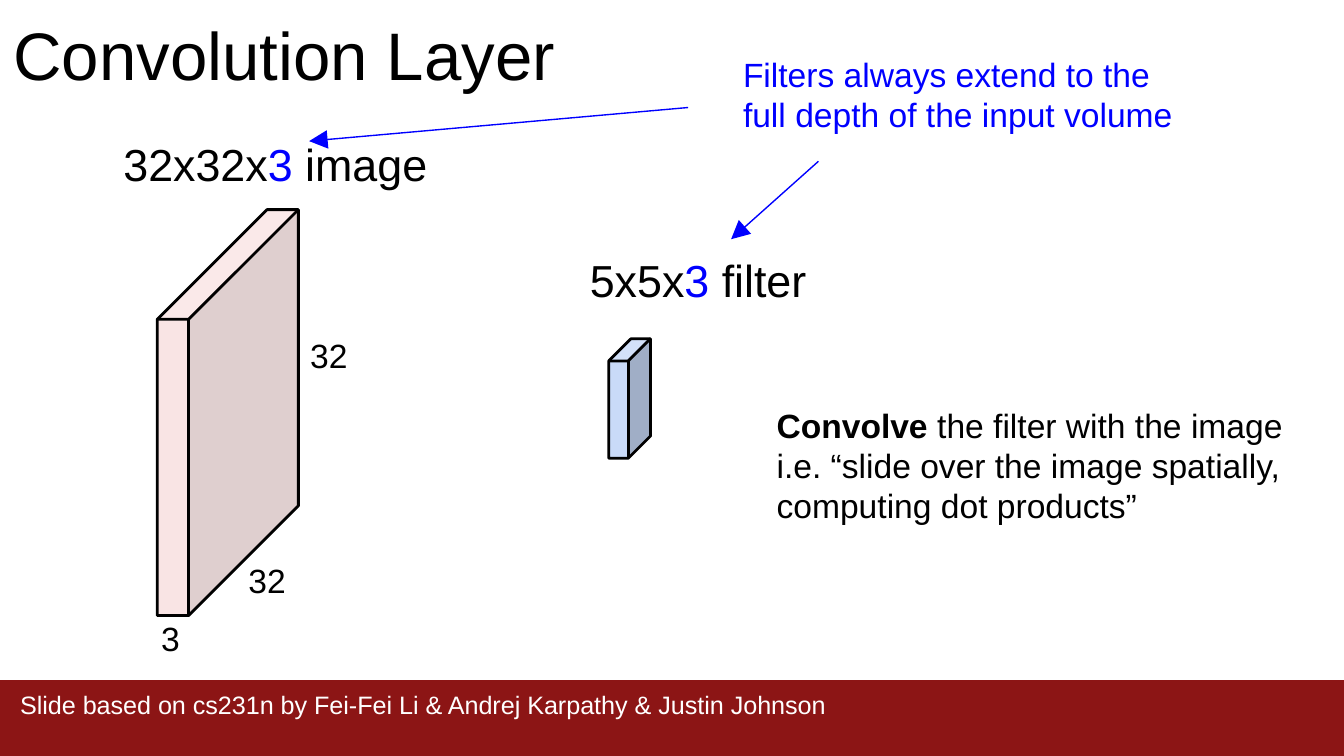
from lxml import etree
from pptx import Presentation
from pptx.dml.color import RGBColor
from pptx.enum.shapes import MSO_CONNECTOR, MSO_SHAPE
from pptx.enum.text import MSO_ANCHOR, MSO_AUTO_SIZE, PP_ALIGN
from pptx.oxml.ns import qn
from pptx.util import Inches, Pt

RECT, CUBE = MSO_SHAPE.RECTANGLE, MSO_SHAPE.CUBE
LINE = MSO_CONNECTOR.STRAIGHT
TOP, LEFT, NOFIT = MSO_ANCHOR.TOP, PP_ALIGN.LEFT, MSO_AUTO_SIZE.NONE
BLACK = RGBColor(0, 0, 0)
WHITE = RGBColor(255, 255, 255)
BLUE = RGBColor(0, 0, 255)
RED = RGBColor(0x8C, 0x15, 0x15)
PINK = RGBColor(0xF4, 0xCC, 0xCC)
PALE = RGBColor(0xC9, 0xDA, 0xF8)
BOLD = {"bold": True}
HUE = {"color": BLUE}

TITLE = ((0, 0, 8.42, 0.72), 36, [[("Convolution Layer", {})]])
CREDIT = "Slide based on cs231n by Fei-Fei Li & Andrej Karpathy & Justin Johnson"
BAR = (0, 5.06, 10, 0.58)
CUBES = [
    ((1.17, 1.56, 1.05, 3.02), 0.777, PINK, 52),
    ((4.53, 2.52, 0.31, 0.89), 0.534, PALE, 100),
]
TEXTS = [
    ((1.75, 4.07, 0.54, 0.34), 18, [[("32", {})]]),
    ((2.21, 2.39, 0.54, 0.31), 18, [[("32", {})]]),
    ((1.1, 4.5, 0.54, 0.2), 18, [[("3", {})]]),
    ((4.29, 1.78, 2.31, 0.39), 24, [[("5x5x", {}), ("3", HUE), (" filter", {})]]),
    ((0.82, 0.92, 3.66, 0.52), 24, [[("32x32x", {}), ("3", HUE), (" image", {})]]),
    ((5.68, 2.91, 4.32, 0.83), 18, [
        [("Convolve ", BOLD), ("the filter with the image", {})],
        [("i.e. “slide over the image spatially, computing dot products”", {})],
    ]),
    ((5.43, 0.3, 3.59, 0.64), 18, [
        [("Filters always extend to the full depth of the input volume", HUE)],
    ]),
]
ARROWS = [(6.09, 1.2, 5.44, 1.78), (5.12, 0.8, 2.3, 1.05)]


def assign(obj, vals):
    for key, val in vals.items():
        setattr(obj, key, val)


def place(shape, box):
    names = ("left", "top", "width", "height")
    assign(shape, dict(zip(names, map(Inches, box))))


def write(shape, size, paras, pad=0.1):
    frame = shape.text_frame
    sides = ("left", "right", "top", "bottom")
    assign(frame, {f"margin_{side}": Inches(pad) for side in sides})
    assign(frame, {"word_wrap": True, "auto_size": NOFIT, "vertical_anchor": TOP})
    for i, runs in enumerate(paras):
        para = frame.add_paragraph() if i else frame.paragraphs[0]
        assign(para, {"alignment": LEFT, "line_spacing": 1.0,
                      "space_before": Pt(0), "space_after": Pt(0)})
        for text, look in runs:
            run = para.add_run()
            run.text = text
            assign(run.font, {"name": "Arial", "size": Pt(size),
                              "bold": look.get("bold", False)})
            run.font.color.rgb = look.get("color", BLACK)


def add_text(slide, box, size, paras, **opts):
    write(slide.shapes.add_textbox(*map(Inches, box)), size, paras, **opts)


def add_solid(slide, kind, box, color):
    shape = slide.shapes.add_shape(kind, *map(Inches, box))
    shape.shadow.inherit = False
    shape.fill.solid()
    shape.fill.fore_color.rgb = color
    return shape


def add_cube(slide, box, depth, color, alpha):
    cube = add_solid(slide, CUBE, box, color)
    cube.adjustments[0] = depth
    cube.line.color.rgb = BLACK
    cube.line.width = Pt(1.5)
    if alpha < 100:
        tint = cube._element.spPr.find(qn("a:solidFill"))[0]
        etree.SubElement(tint, qn("a:alpha"), val=str(alpha * 1000))


def add_arrow(slide, ends):
    arrow = slide.shapes.add_connector(LINE, *map(Inches, ends))
    arrow.line.color.rgb = BLUE
    arrow.line.width = Pt(0.75)
    edge = arrow._element.spPr.find(qn("a:ln"))
    etree.SubElement(edge, qn("a:tailEnd"), type="triangle", w="lg", len="lg")
    etree.SubElement(arrow._element.spPr, qn("a:effectLst"))


def main():
    deck = Presentation()
    deck.slide_width = Inches(10)
    deck.slide_height = deck.slide_width * 9 // 16
    slide = deck.slides.add_slide(deck.slide_layouts[5])
    box, size, paras = TITLE
    place(slide.shapes.title, box)
    write(slide.shapes.title, size, paras)
    add_solid(slide, RECT, BAR, RED).line.fill.background()
    add_text(slide, (0.08, 5.06, 9.8, 0.59), 13.5,
             [[(CREDIT, {"color": WHITE})]], pad=0.07)
    for cube in CUBES:
        add_cube(slide, *cube)
    for text in TEXTS:
        add_text(slide, *text)
    for ends in ARROWS:
        add_arrow(slide, ends)
    deck.save("out.pptx")


if __name__ == "__main__":
    main()
